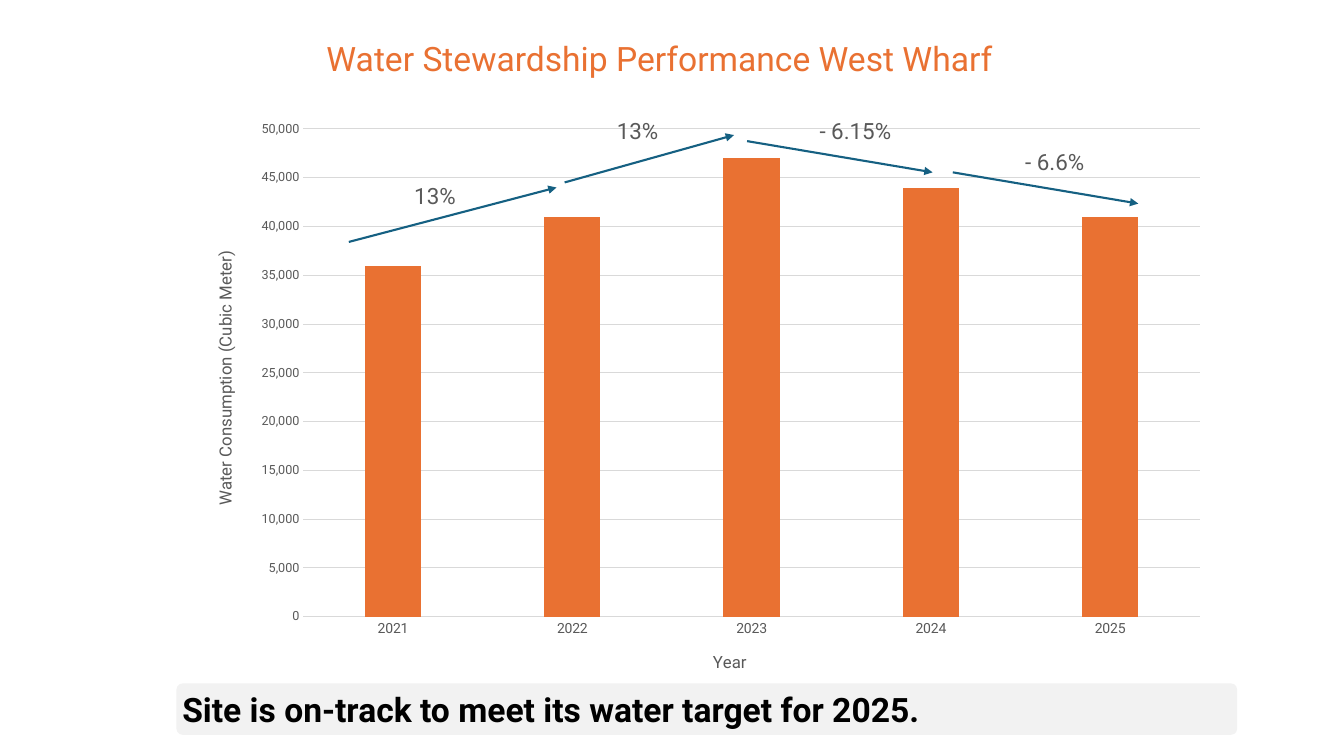
import pptx
import pptx.util
import pptx.chart.data
import pptx.dml.color
import pptx.enum.chart
import pptx.enum.shapes
import pptx.enum.text
import pptx.oxml
import pptx.oxml.ns
import lxml.etree

RGBColor = pptx.dml.color.RGBColor
ORANGE = RGBColor(0xE9, 0x71, 0x32)
BLUE = RGBColor(0x15, 0x60, 0x82)
GREY = RGBColor(0x59, 0x59, 0x59)
RULE = RGBColor(0xD9, 0xD9, 0xD9)
PALE = RGBColor(0xF2, 0xF2, 0xF2)
BLACK = RGBColor(0, 0, 0)
FONT = "Roboto"
PX = 9144
WIDE, HIGH = 1019, 581
Pt = pptx.util.Pt
qn = pptx.oxml.ns.qn


def style(font, size, color, bold=False):
    font.name = FONT
    font.size = Pt(size)
    font.color.rgb = color
    font.bold = bold


def layout(node, index, **parts):
    for old in node.findall(qn("c:layout")):
        node.remove(old)
    frame = lxml.etree.Element(qn("c:layout"))
    manual = lxml.etree.SubElement(frame, qn("c:manualLayout"))
    for name, value in parts.items():
        lxml.etree.SubElement(manual, qn("c:" + name)).set("val", str(value))
    node.insert(index, frame)


deck = pptx.Presentation()
deck.slide_width = 1333 * PX
deck.slide_height = 750 * PX
slide = deck.slides.add_slide(deck.slide_layouts[6])
shapes = slide.shapes

data = pptx.chart.data.CategoryChartData(number_format="#,##0")
data.categories = ["2021", "2022", "2023", "2024", "2025"]
data.add_series("Series 1", [36000, 41000, 47000, 44000, 41000])
kind = pptx.enum.chart.XL_CHART_TYPE.COLUMN_CLUSTERED
chart = shapes.add_chart(kind, 191 * PX, 109 * PX, WIDE * PX, HIGH * PX, data).chart
chart.has_legend = False
chart.has_title = False
style(chart.font, 10, BLACK)
plot = chart.plots[0]
plot.vary_by_categories = False
plot.gap_width = 219
plot.overlap = -27
fill = plot.series[0].format.fill
fill.solid()
fill.fore_color.rgb = ORANGE

years, volume = chart.category_axis, chart.value_axis
for axis, title, size, x, y in [
    (years, "Year", 10, 513, 534),
    (volume, "Water Consumption (Cubic Meter)", 9, 18, 137),
]:
    axis.major_tick_mark = pptx.enum.chart.XL_TICK_MARK.NONE
    axis.minor_tick_mark = pptx.enum.chart.XL_TICK_MARK.NONE
    style(axis.tick_labels.font, size, GREY)
    frame = axis.axis_title.text_frame
    frame.text = title
    style(frame.paragraphs[0].runs[0].font, 12, GREY)
    layout(axis.axis_title._element, 1, xMode="edge", yMode="edge",
           x=x / WIDE, y=y / HIGH)

years.has_major_gridlines = False
volume.minimum_scale = 0
volume.maximum_scale = 50000
volume.major_unit = 5000
volume.tick_labels.number_format = "#,##0"
volume.tick_labels.number_format_is_linked = False
volume.format.line.fill.background()
for line in (years.format.line, volume.major_gridlines.format.line):
    line.color.rgb = RULE
    line.width = Pt(0.75)
area = chart._chartSpace.find(qn("c:chart")).find(qn("c:plotArea"))
layout(area, 0, layoutTarget="inner", xMode="edge", yMode="edge",
       x=110 / WIDE, y=19 / HIGH, w=889 / WIDE, h=484 / HIGH)

arrows = [
    (346, 240, 552, 186),
    (560, 181, 728, 134),
    (741, 140, 925, 171),
    (945, 171, 1129, 202),
]
for ends in arrows:
    arrow = shapes.add_connector(
        pptx.enum.shapes.MSO_CONNECTOR.STRAIGHT, *[end * PX for end in ends])
    arrow.line.color.rgb = BLUE
    arrow.line.width = Pt(1.5)
    head = lxml.etree.SubElement(arrow.line._get_or_add_ln(), qn("a:tailEnd"))
    head.set("type", "triangle")
    lxml.etree.SubElement(arrow._element.spPr, qn("a:effectLst"))

labels = [
    ("13%", 401, 176, 68, 37, 16, GREY),
    ("13%", 602, 111, 63, 37, 16, GREY),
    ("- 6.15%", 803, 111, 93, 37, 16, GREY),
    ("- 6.6%", 1007, 142, 81, 37, 16, GREY),
    ("Water Stewardship Performance West Wharf", 314, 33, 706, 50, 24, ORANGE),
]
for text, x, y, w, h, size, color in labels:
    box = shapes.add_textbox(x * PX, y * PX, w * PX, h * PX)
    frame = box.text_frame
    frame.word_wrap = False
    frame.text = text
    style(frame.paragraphs[0].runs[0].font, size, color)

banner = shapes.add_shape(pptx.enum.shapes.MSO_SHAPE.ROUNDED_RECTANGLE,
                          175 * PX, 678 * PX, 1052 * PX, 51 * PX)
banner.adjustments[0] = 0.12
banner.shadow.inherit = False
banner.fill.solid()
banner.fill.fore_color.rgb = PALE
banner.line.fill.background()
frame = banner.text_frame
frame.word_wrap = True
frame.vertical_anchor = pptx.enum.text.MSO_ANCHOR.MIDDLE
frame.margin_left = frame.margin_right = 4 * PX
frame.margin_top = frame.margin_bottom = 4 * PX
frame.text = "Site is on-track to meet its water target for 2025."
para = frame.paragraphs[0]
para.alignment = pptx.enum.text.PP_ALIGN.LEFT
para.space_after = Pt(3)
style(para.runs[0].font, 24, BLACK, True)

deck.save("out.pptx")
